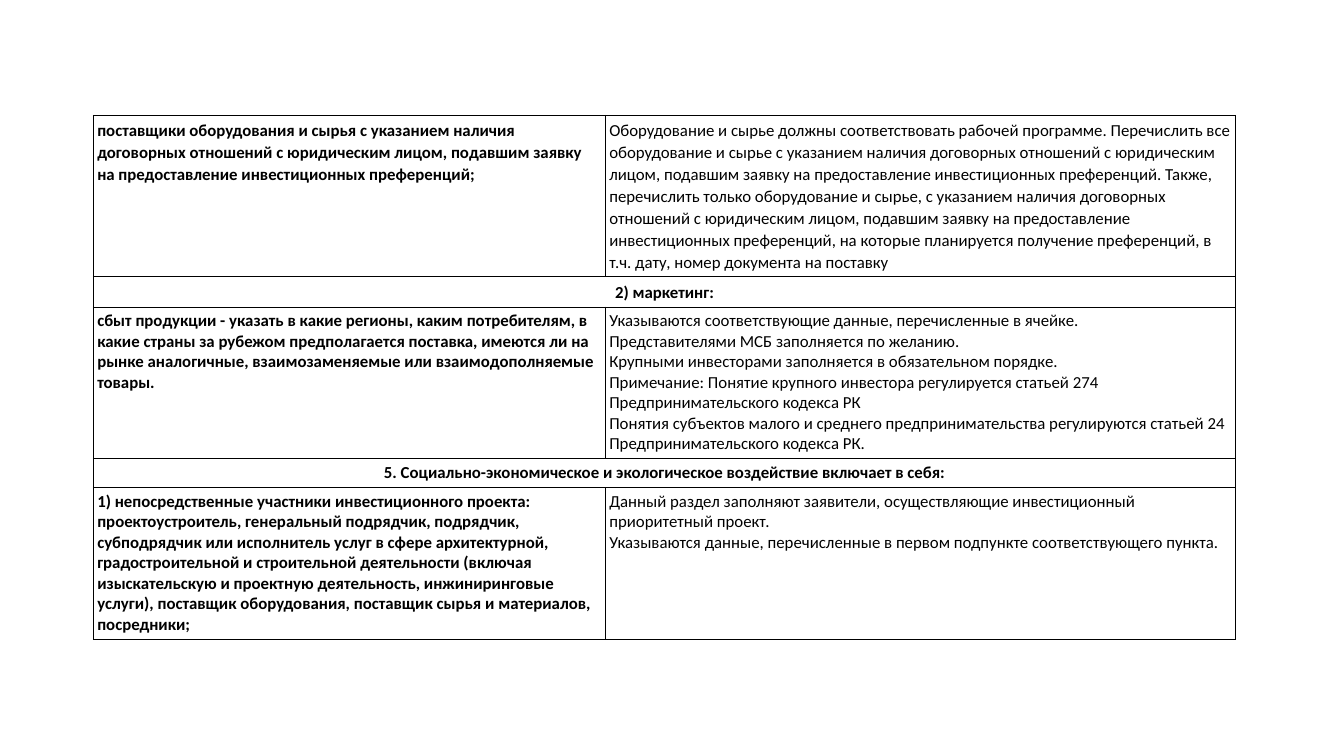
from dataclasses import dataclass

from lxml import etree
from pptx import Presentation
from pptx import util as u
from pptx.dml.color import RGBColor
from pptx.enum import text
from pptx.oxml.ns import qn


@dataclass(frozen=True)
class Theme:
    font: str = "Calibri"
    size: float = 24
    ink: str = "000000"
    rule: float = 1
    inset: float = 5.76
    loose: float = 1.07
    gap: float = 12


@dataclass
class Row:
    height: float
    label: list
    details: list = None
    loose: bool = False


ROWS = [
    Row(231, [
        "поставщики оборудования и сырья с указанием наличия договорных отношений "
        "с юридическим лицом, подавшим заявку на предоставление инвестиционных преференций;",
    ], [
        "Оборудование и сырье должны соответствовать рабочей программе. Перечислить все "
        "оборудование и сырье с указанием наличия договорных отношений с юридическим лицом, "
        "подавшим заявку на предоставление инвестиционных преференций. Также, перечислить "
        "только оборудование и сырье, с указанием наличия договорных отношений с юридическим "
        "лицом, подавшим заявку на предоставление инвестиционных преференций, на которые "
        "планируется получение преференций, в т.ч. дату, номер документа на поставку",
    ], loose=True),
    Row(43, ["2) маркетинг:"], loose=True),
    Row(217, [
        "сбыт продукции - указать в какие регионы, каким потребителям, в",
        "какие страны за рубежом предполагается поставка, имеются ли на рынке аналогичные, "
        "взаимозаменяемые или взаимодополняемые товары.",
    ], [
        "Указываются соответствующие данные, перечисленные в ячейке.",
        "Представителями МСБ заполняется по желанию.",
        "Крупными инвесторами заполняется в обязательном порядке.",
        "Примечание: Понятие крупного инвестора регулируется статьей 274 "
        "Предпринимательского кодекса РК",
        "Понятия субъектов малого и среднего предпринимательства регулируются статьей 24 "
        "Предпринимательского кодекса РК.",
    ]),
    Row(41, ["5. Социально-экономическое и экологическое воздействие включает в себя:"]),
    Row(217, [
        "1) непосредственные участники инвестиционного проекта:",
        "проектоустроитель, генеральный подрядчик, подрядчик, субподрядчик или исполнитель "
        "услуг в сфере архитектурной, градостроительной и строительной деятельности (включая "
        "изыскательскую и проектную деятельность, инжиниринговые услуги), поставщик "
        "оборудования, поставщик сырья и материалов, посредники;",
    ], [
        "Данный раздел заполняют заявители, осуществляющие инвестиционный приоритетный проект.",
        "Указываются данные, перечисленные в первом подпункте соответствующего пункта.",
    ]),
]


class Painter:
    """Draws requirement tables on a slide in one theme."""

    def __init__(self, slide, theme):
        self.slide = slide
        self.theme = theme

    def table(self, left, top, widths, rows):
        frame = self.slide.shapes.add_table(
            len(rows), len(widths), u.Pt(left), u.Pt(top),
            u.Pt(sum(widths)), u.Pt(sum(row.height for row in rows)))
        table = frame.table
        table.first_row = table.horz_banding = False
        for column, width in zip(table.columns, widths):
            column.width = u.Pt(width)
        for index, row in enumerate(rows):
            table.rows[index].height = u.Pt(row.height)
            label, details = table.cell(index, 0), table.cell(index, 1)
            for cell in (label, details):
                self.frame_cell(cell)
            if row.details is None:
                label.merge(details)
                self.fill_cell(label, row.label, True, row.loose, text.PP_ALIGN.CENTER)
            else:
                self.fill_cell(label, row.label, True, row.loose)
                self.fill_cell(details, row.details, False, row.loose)

    def frame_cell(self, cell):
        properties = cell._tc.get_or_add_tcPr()
        for side in ("a:lnL", "a:lnR", "a:lnT", "a:lnB"):
            line = etree.SubElement(properties, qn(side), w=str(u.Pt(self.theme.rule)))
            fill = etree.SubElement(line, qn("a:solidFill"))
            etree.SubElement(fill, qn("a:srgbClr"), val=self.theme.ink)
        cell.fill.background()
        cell.margin_left = cell.margin_right = u.Pt(self.theme.inset)
        cell.margin_top = cell.margin_bottom = u.Pt(self.theme.inset)

    def fill_cell(self, cell, lines, bold, loose, align=text.PP_ALIGN.LEFT):
        cell.text_frame.text = "\n".join(lines)
        for para in cell.text_frame.paragraphs:
            para.alignment = align
            if loose:
                para.line_spacing = self.theme.loose
                para.space_after = u.Pt(self.theme.gap)
            for span in para.runs:
                span.font.name = self.theme.font
                span.font.size = u.Pt(self.theme.size)
                span.font.bold = bold
                span.font.color.rgb = RGBColor.from_string(self.theme.ink)


def main():
    deck = Presentation()
    deck.slide_width, deck.slide_height = u.Pt(1920), u.Pt(1080)
    page = deck.slides.add_slide(deck.slide_layouts[6])
    Painter(page, Theme()).table(133.2, 164.4, [731.5, 900.7], ROWS)
    deck.save("out.pptx")


if __name__ == "__main__":
    main()
